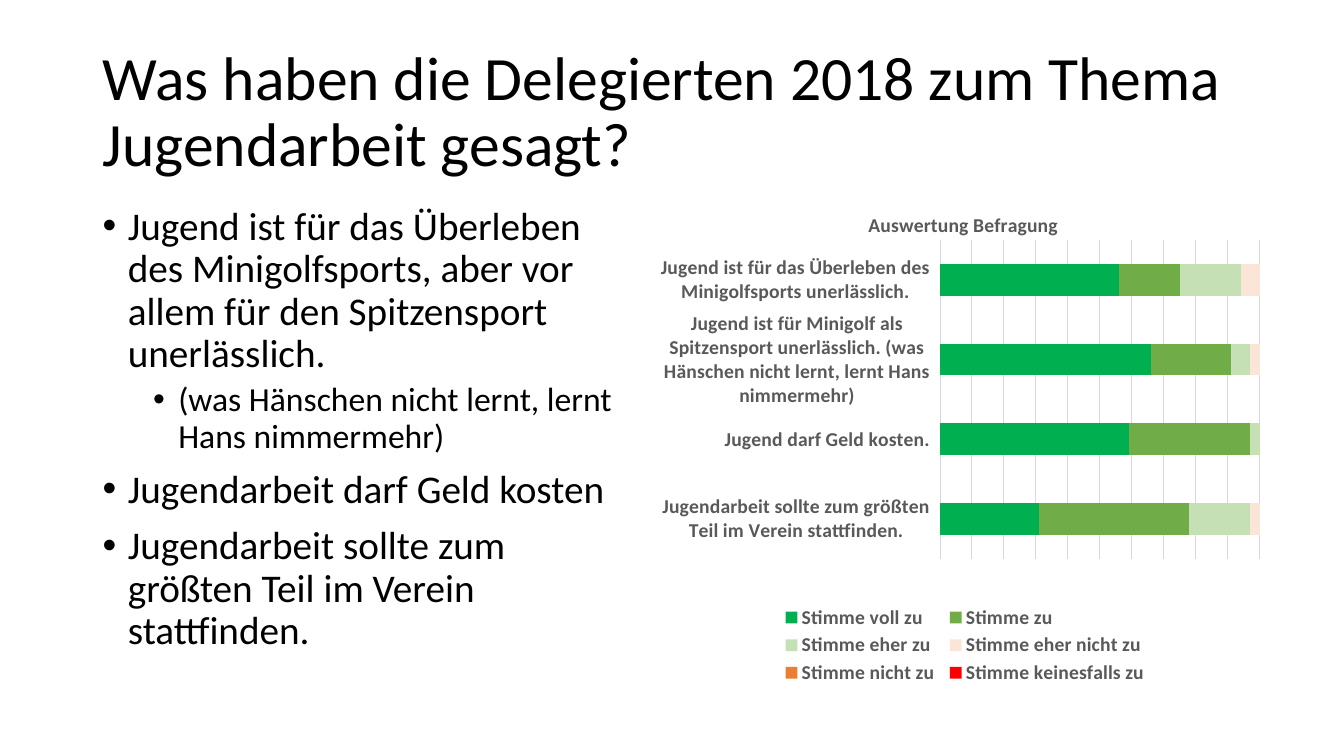
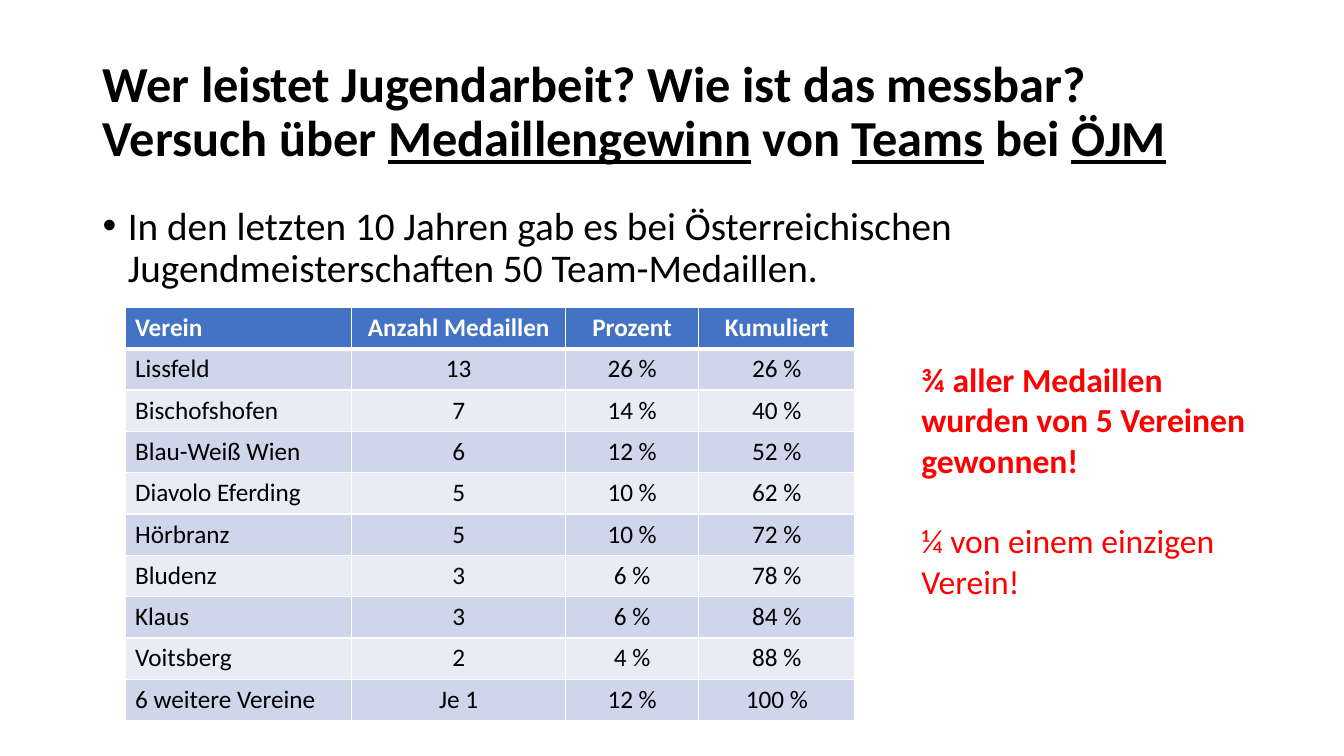
"""Build two slides on youth work in minigolf clubs."""
from lxml import etree
from pptx import Presentation
from pptx.chart.data import CategoryChartData
from pptx.dml.color import RGBColor
from pptx.enum.chart import XL_CHART_TYPE, XL_LEGEND_POSITION, XL_TICK_LABEL_POSITION, XL_TICK_MARK
from pptx.enum.text import MSO_ANCHOR, PP_ALIGN
from pptx.oxml.ns import qn
from pptx.util import Inches, Pt

BAR = XL_CHART_TYPE.BAR_STACKED_100
BELOW = XL_LEGEND_POSITION.BOTTOM
LOW = XL_TICK_LABEL_POSITION.LOW
NO_TICK = XL_TICK_MARK.NONE
LEFT, CENTER = PP_ALIGN.LEFT, PP_ALIGN.CENTER
TOP, MIDDLE = MSO_ANCHOR.TOP, MSO_ANCHOR.MIDDLE

FONT = "Calibri"
BLACK = RGBColor(0x00, 0x00, 0x00)
WHITE = RGBColor(0xFF, 0xFF, 0xFF)
RED = RGBColor(0xFF, 0x00, 0x00)
GRAY = RGBColor(0x59, 0x59, 0x59)
SILVER = RGBColor(0xD9, 0xD9, 0xD9)
BLUE = RGBColor(0x44, 0x72, 0xC4)
BANDS = RGBColor(0xCF, 0xD5, 0xEA), RGBColor(0xE9, 0xEB, 0xF5)
GREEN = RGBColor(0x00, 0xB0, 0x50)
LEAF = RGBColor(0x70, 0xAD, 0x47)
MINT = RGBColor(0xC5, 0xE0, 0xB4)
PEACH = RGBColor(0xFB, 0xE5, 0xD6)
ORANGE = RGBColor(0xED, 0x7D, 0x31)

POINTS = [
    (0, "Jugend ist für das Überleben des Minigolfsports, aber vor allem für den "
        "Spitzensport unerlässlich."),
    (1, "(was Hänschen nicht lernt, lernt Hans nimmermehr)"),
    (0, "Jugendarbeit darf Geld kosten"),
    (0, "Jugendarbeit sollte zum größten Teil im Verein stattfinden."),
]
THESES = [
    "Jugend ist für das Überleben des Minigolfsports unerlässlich.",
    "Jugend ist für Minigolf als Spitzensport unerlässlich. "
    "(was Hänschen nicht lernt, lernt Hans nimmermehr)",
    "Jugend darf Geld kosten.",
    "Jugendarbeit sollte zum größten Teil im Verein stattfinden.",
]
VOTES = [
    ("Stimme voll zu", (56, 66, 59, 31), GREEN),
    ("Stimme zu", (19, 25, 38, 47), LEAF),
    ("Stimme eher zu", (19, 6, 3, 19), MINT),
    ("Stimme eher nicht zu", (6, 3, None, 3), PEACH),
    ("Stimme nicht zu", (None,) * 4, ORANGE),
    ("Stimme keinesfalls zu", (None,) * 4, RED),
]
CLUBS = [
    ("Verein", "Anzahl Medaillen", "Prozent", "Kumuliert"),
    ("Lissfeld", "13", "26 %", "26 %"),
    ("Bischofshofen", "7", "14 %", "40 %"),
    ("Blau-Weiß Wien", "6", "12 %", "52 %"),
    ("Diavolo Eferding", "5", "10 %", "62 %"),
    ("Hörbranz", "5", "10 %", "72 %"),
    ("Bludenz", "3", "6 %", "78 %"),
    ("Klaus", "3", "6 %", "84 %"),
    ("Voitsberg", "2", "4 %", "88 %"),
    ("6 weitere Vereine", "Je 1", "12 %", "100 %"),
]
WIDTHS = 2.25, 2.12, 1.32, 1.55
ROW = 0.41


def style(font, size, color=BLACK, bold=False):
    font.name, font.size, font.bold = FONT, Pt(size), bold
    font.color.rgb = color


def add_box(slide, x, y, w, h, anchor=TOP):
    box = slide.shapes.add_textbox(Inches(x), Inches(y), Inches(w), Inches(h))
    frame = box.text_frame
    frame.word_wrap = True
    frame.vertical_anchor = anchor
    return frame


def add_title(slide, lines, size, bold=False):
    para = add_box(slide, 0.92, 0.4, 11.5, 1.45, MIDDLE).paragraphs[0]
    para.line_spacing = 0.9
    for i, line in enumerate(lines):
        if i:
            para.add_line_break()
        for j, text in enumerate(line):
            run = para.add_run()
            run.text = text
            style(run.font, size, bold=bold)
            if j % 2:
                run.font.underline = True


def add_points(slide, width, points):
    frame = add_box(slide, 0.92, 2, width, 4.76)
    for i, (level, text) in enumerate(points):
        para = frame.add_paragraph() if i else frame.paragraphs[0]
        para.text = text
        para.level = level
        para.line_spacing = 0.9
        para.space_before = Pt(5 if level else 10)
        style(para.runs[0].font, 24 if level else 28)
        props = para._p.get_or_add_pPr()
        props.set("marL", str(Inches(0.25 + 0.5 * level)))
        props.set("indent", str(Inches(-0.25)))
        etree.SubElement(props, qn("a:buFont"), typeface="Arial")
        etree.SubElement(props, qn("a:buChar"), char="•")


def place(part, index, **spots):
    old = part.find(qn("c:layout"))
    if old is not None:
        part.remove(old)
    layout = etree.Element(qn("c:layout"))
    part.insert(index, layout)
    manual = etree.SubElement(layout, qn("c:manualLayout"))
    for key, value in spots.items():
        etree.SubElement(manual, qn("c:" + key), val=str(value))


def add_votes(slide):
    data = CategoryChartData()
    data.categories = THESES
    for name, values, _ in VOTES:
        data.add_series(name, values)
    chart = slide.shapes.add_chart(
        BAR, Inches(6.4), Inches(1.47), Inches(6.22), Inches(5.36), data).chart
    style(chart.font, 10)
    plot = chart.plots[0]
    plot.gap_width, plot.overlap, plot.vary_by_categories = 150, 100, False
    for series, (_, _, color) in zip(plot.series, VOTES):
        series.format.fill.solid()
        series.format.fill.fore_color.rgb = color
        series.invert_if_negative = False

    title = chart.chart_title
    title.text_frame.text = "Auswertung Befragung"
    style(title.text_frame.paragraphs[0].runs[0].font, 14, GRAY, True)
    title.include_in_layout = False

    axis = chart.category_axis
    axis.reverse_order = True
    axis.major_tick_mark = axis.minor_tick_mark = NO_TICK
    axis.tick_label_position = LOW
    style(axis.tick_labels.font, 14, GRAY, True)

    scale = chart.value_axis
    scale.minimum_scale, scale.maximum_scale, scale.major_unit = 0, 1, 0.1
    scale.has_major_gridlines = True
    scale.visible = False
    for line in axis.format.line, scale.major_gridlines.format.line:
        line.color.rgb = SILVER
        line.width = Pt(0.75)

    chart.has_legend = True
    legend = chart.legend
    legend.position = BELOW
    legend.include_in_layout = False
    style(legend.font, 14, GRAY, True)

    edge = {"xMode": "edge", "yMode": "edge"}
    area = chart._chartSpace.find(".//" + qn("c:plotArea"))
    place(area, 0, layoutTarget="inner", **edge, x=0.47, y=0.17, w=0.51, h=0.59)
    place(title._element, 1, **edge, x=0.35, y=0.11)
    place(legend._element, 1, **edge, x=0.21, y=0.84, w=0.6, h=0.16)


def edge_cell(cell, head, first):
    props = cell._tc.get_or_add_tcPr()
    for side in "LRTB":
        thick = (head and side == "B") or (first and side == "T")
        line = etree.SubElement(props, qn("a:ln" + side), w=str(Pt(3 if thick else 1)))
        fill = etree.SubElement(line, qn("a:solidFill"))
        etree.SubElement(fill, qn("a:srgbClr"), val=str(WHITE))


def add_clubs(slide):
    table = slide.shapes.add_table(
        len(CLUBS), len(WIDTHS), Inches(1.24), Inches(3.05),
        Inches(sum(WIDTHS)), Inches(ROW * len(CLUBS))).table
    for col, width in zip(table.columns, WIDTHS):
        col.width = Inches(width)
    for r, club in enumerate(CLUBS):
        table.rows[r].height = Inches(ROW)
        head = r == 0
        for c, text in enumerate(club):
            cell = table.cell(r, c)
            edge_cell(cell, head, r == 1)
            cell.fill.solid()
            cell.fill.fore_color.rgb = BLUE if head else BANDS[(r - 1) % 2]
            cell.text_frame.text = text
            para = cell.text_frame.paragraphs[0]
            para.alignment = CENTER if c else LEFT
            style(para.runs[0].font, 18, WHITE if head else BLACK, head)


def add_note(slide):
    frame = add_box(slide, 9.04, 3.51, 3.5, 2.52)
    frame.text = ("¾ aller Medaillen wurden von 5 Vereinen gewonnen!\n"
                  "¼ von einem einzigen Verein!")
    top, last = frame.paragraphs
    style(top.runs[0].font, 24, RED, True)
    style(last.runs[0].font, 24, RED)
    last.space_before = Pt(29)


def main():
    deck = Presentation()
    deck.slide_width, deck.slide_height = Inches(13.33), Inches(7.5)
    blank = deck.slide_layouts[6]

    survey = deck.slides.add_slide(blank)
    add_title(survey, [["Was haben die Delegierten 2018 zum Thema"],
                       ["Jugendarbeit gesagt?"]], 44)
    add_points(survey, 5.48, POINTS)
    add_votes(survey)

    medals = deck.slides.add_slide(blank)
    add_title(medals, [["Wer leistet Jugendarbeit? Wie ist das messbar?"],
                       ["Versuch über ", "Medaillengewinn", " von ", "Teams",
                        " bei ", "ÖJM"]], 36, True)
    add_points(medals, 10.05, [
        (0, "In den letzten 10 Jahren gab es bei Österreichischen "
            "Jugendmeisterschaften 50 Team-Medaillen.")])
    add_clubs(medals)
    add_note(medals)
    deck.save("out.pptx")


if __name__ == "__main__":
    main()
